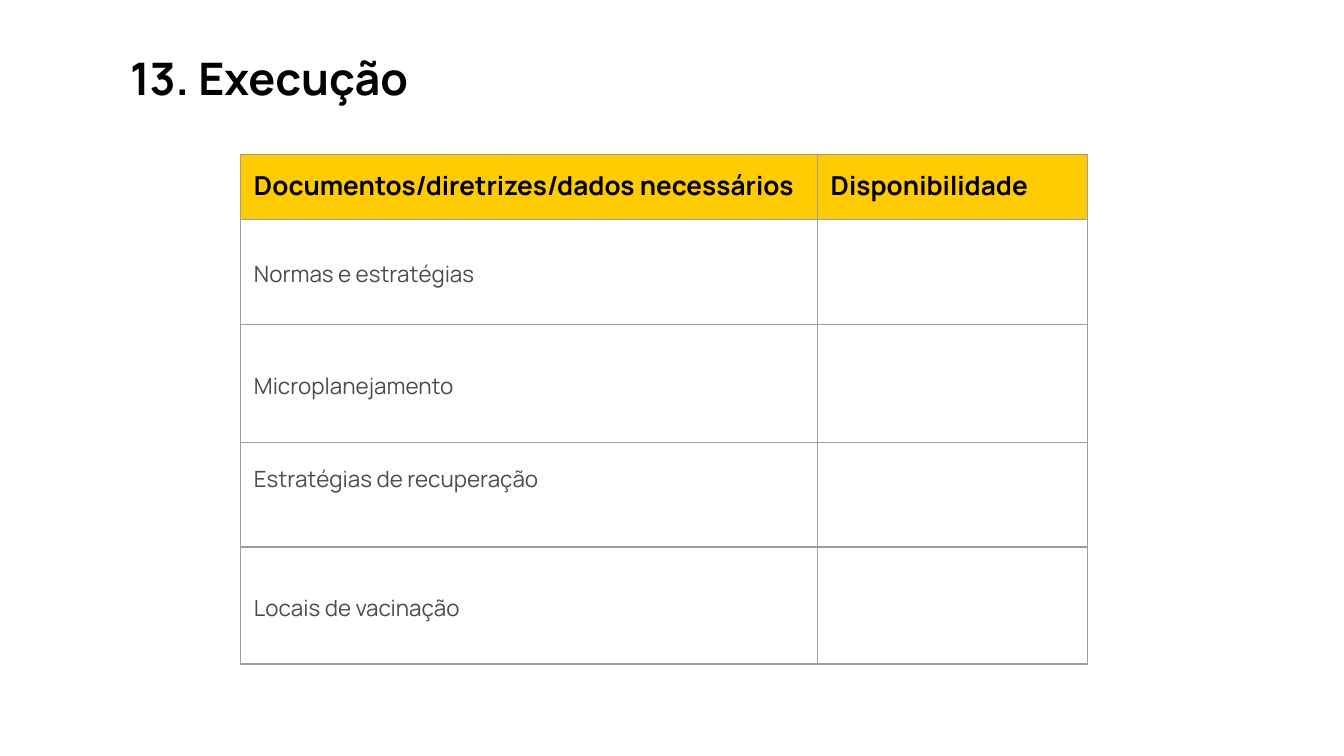
from lxml import etree
from pptx import Presentation
from pptx.dml.color import RGBColor
from pptx.enum.text import MSO_ANCHOR
from pptx.oxml.ns import qn
from pptx.util import Cm, Pt

TOP, MIDDLE = MSO_ANCHOR.TOP, MSO_ANCHOR.MIDDLE
BLACK = RGBColor(0x00, 0x00, 0x00)
GREY = RGBColor(0x4C, 0x4C, 0x4C)
RULE = RGBColor(0x9E, 0x9E, 0x9E)
YELLOW = RGBColor(0xFF, 0xCB, 0x03)
PAD = Cm(0.25)


class Deck:
    font = "Manrope"

    def __init__(self, slide):
        self.slide = slide

    def style(self, frame, size, color, bold):
        for para in frame.paragraphs:
            for run in para.runs:
                font = run.font
                font.name, font.size, font.bold = self.font, Pt(size), bold
                font.color.rgb = color

    def title(self, text, left, top, width, height):
        box = self.slide.shapes.add_textbox(Cm(left), Cm(top), Cm(width), Cm(height))
        frame = box.text_frame
        frame.word_wrap = True
        frame.margin_left = frame.margin_right = PAD
        frame.margin_top = frame.margin_bottom = PAD
        frame.text = text
        self.style(frame, 24, BLACK, True)

    def border(self, cell):
        props = cell._tc.get_or_add_tcPr()
        for spot, side in enumerate(("lnL", "lnR", "lnT", "lnB")):
            line = etree.Element(qn("a:" + side), w=str(Pt(0.75)))
            fill = etree.SubElement(line, qn("a:solidFill"))
            etree.SubElement(fill, qn("a:srgbClr"), val=str(RULE))
            props.insert(spot, line)

    def cell(self, cell, text, head):
        cell.margin_left = cell.margin_right = PAD
        cell.margin_top = cell.margin_bottom = PAD
        cell.vertical_anchor = TOP if head else MIDDLE
        cell.text_frame.text = text
        if head:
            cell.fill.solid()
            cell.fill.fore_color.rgb = YELLOW
            self.style(cell.text_frame, 14, BLACK, True)
        else:
            cell.fill.background()
            cell.text_frame.paragraphs[0].line_spacing = 1.15
            self.style(cell.text_frame, 12, GREY, False)
        self.border(cell)

    def table(self, rows, left, top, widths, heights):
        frame = self.slide.shapes.add_table(
            len(rows), len(widths), Cm(left), Cm(top),
            Cm(sum(widths)), Cm(sum(heights)))
        table = frame.table
        table.first_row = table.horz_banding = False
        for col, width in zip(table.columns, widths):
            col.width = Cm(width)
        for r, (texts, height) in enumerate(zip(rows, heights)):
            table.rows[r].height = Cm(height)
            for c, text in enumerate(texts):
                self.cell(table.cell(r, c), text, r == 0)
        return table


def main():
    prs = Presentation()
    prs.slide_width, prs.slide_height = Cm(25.4), Cm(14.29)
    deck = Deck(prs.slides.add_slide(prs.slide_layouts[6]))

    # Heading
    deck.title("13. Execução", 2.21, 0.71, 23.19, 1.5)

    # Checklist, with the second column left open
    items = ("Normas e estratégias", "Microplanejamento",
             "Estratégias de recuperação", "Locais de vacinação")
    rows = [("Documentos/diretrizes/dados necessários", "Disponibilidade")]
    rows += [(item, "") for item in items]
    table = deck.table(rows, 4.55, 2.92, (10.9, 5.1),
                       (1.23, 1.98, 2.23, 1.98, 2.21))

    # The recovery row sits a little higher
    table.cell(3, 0).margin_bottom = Cm(0.94)

    prs.save("out.pptx")


if __name__ == "__main__":
    main()
